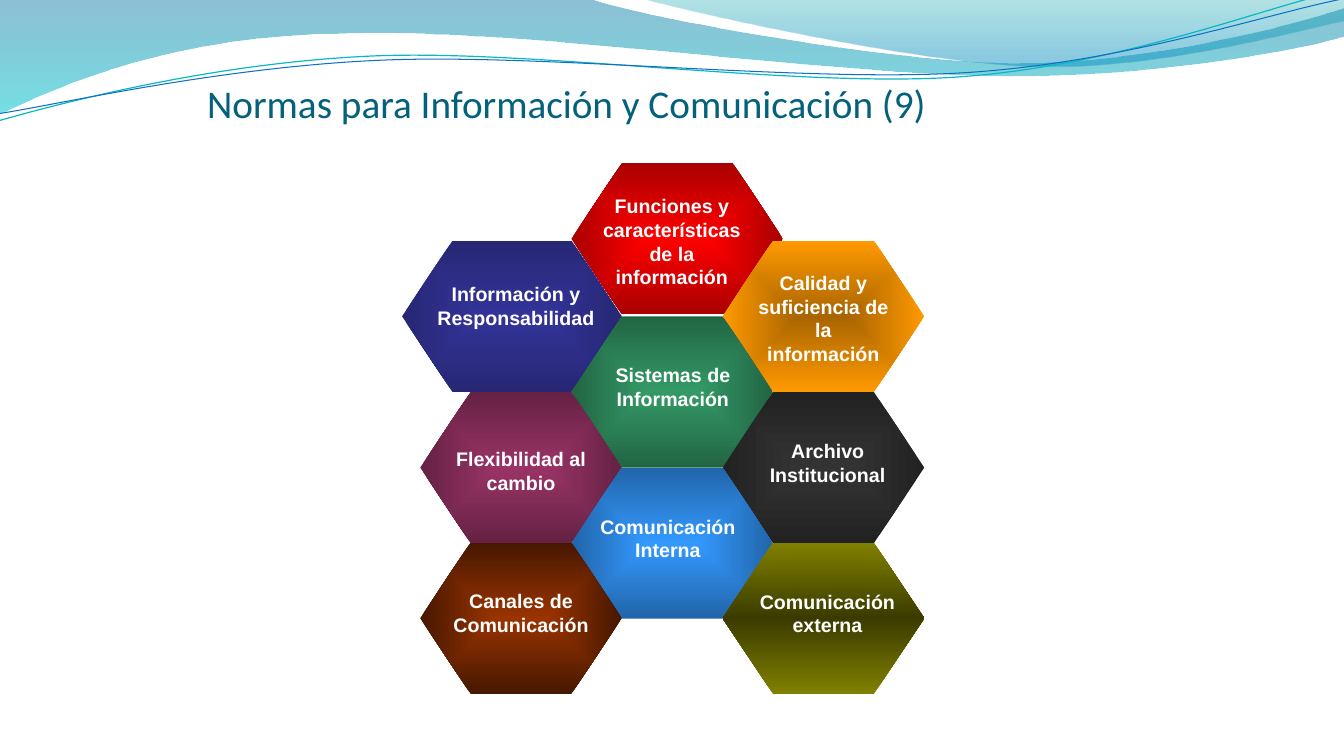
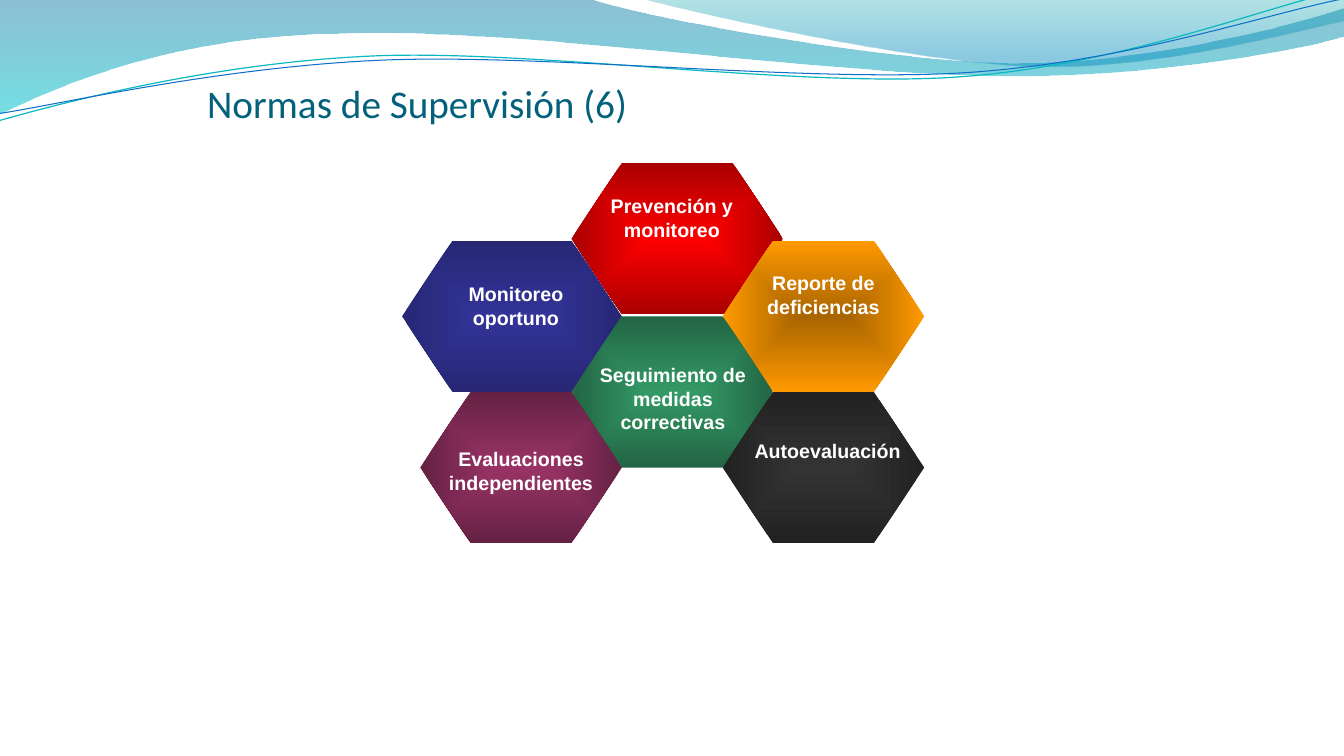
from dataclasses import dataclass

from pptx import Presentation
from pptx import util as u
from pptx.dml.color import RGBColor
from pptx.enum import shapes, text
from pptx.oxml import parse_xml
from pptx.oxml.ns import nsdecls, qn

Pt = u.Pt

COLOURS = {
    "title": "04617B", "label": "FFFFFF",
    "wave_blue": "0074A1", "wave_aqua": "00C6CF",
    "crest_teal": "00A1A9", "crest_blue": "008BBF",
    "line_teal": "0AB8BF", "line_blue": "0F6FC6",
    "red": "FF0000", "red_dark": "A90000",
    "navy": "333399", "navy_dark": "272774",
    "orange": "FF9900", "orange_dark": "A96500",
    "green": "339966", "green_dark": "226544",
    "plum": "993366", "plum_dark": "652244",
    "grey": "333333", "grey_dark": "222222",
    "blue": "3399FF", "blue_dark": "2265A9",
    "olive": "808000", "olive_dark": "3B3B00",
    "brown": "993300", "brown_dark": "471800",
}

TITLE_FONT = {"name": "Calibri", "size": Pt(28), "bold": False}
LABEL_FONT = {"name": "Arial", "size": Pt(14), "bold": True}
TITLE_PLACE = {"left": Pt(148), "top": Pt(39.6), "width": Pt(648), "height": Pt(50.4)}
TITLE_FRAME = {"margin_left": 0, "margin_right": 0, "margin_bottom": 0,
               "margin_top": Pt(3.6), "vertical_anchor": text.MSO_ANCHOR.BOTTOM}
LABEL_FRAME = {"word_wrap": True, "auto_size": text.MSO_AUTO_SIZE.SHAPE_TO_FIT_TEXT}

# Each outline: one letter per segment (L line, C curve), then its points.
WAVE = ("LCCLCCC", [
    (0, 0), (422.6, 0),
    (456.5, 12.2), (637.2, 45.4), (727.9, 45.4),
    (819.4, 45.4), (920.2, 18.7), (960, 6.5), (960, 25.9),
    (943.9, 31.7), (835.2, 54.7), (715.7, 54),
    (596.9, 54), (366.5, 20.2), (247, 24.5),
    (123.8, 25.2), (43.9, 59.8), (0, 81)])
CREST = ("CCL", [
    (460, 0), (488.9, 7.9), (654.5, 44.6), (738, 46.8),
    (821.5, 49.7), (923, 23), (960, 15.1), (960, 0)])
TEAL_LINE = ("CCC", [
    (0, 85.7), (46.1, 72.7), (151.9, 44.6), (265.7, 39.6),
    (379.4, 34.6), (568.8, 62.6), (684, 54.7),
    (799.2, 46.8), (901.4, 5.8), (958.3, -7.2)])
BLUE_LINE = ("CCC", [
    (0, 80.6), (45.4, 74.2), (157, 47.5), (272.2, 43.2),
    (386.6, 38.2), (573.1, 59), (687.6, 51.8),
    (802.8, 44.6), (903.6, 10.1), (960.5, -1.4)])

FIRST_COLUMN, COLUMN_STEP = 300.2, 108
ROW_TOPS = (116.6, 172, 226, 280, 334, 387.6)
CELL_WIDTH, CELL_HEIGHT = 144, 108
LINE_HEIGHT, LABEL_PADDING = 16.8, 7.2


@dataclass
class Cell:
    """A place in the honeycomb; label holds x offset, y offset and width."""
    column: int
    row: int
    tones: tuple
    label: tuple
    extra_left: float = 0
    extra_right: float = 0


CELLS = [
    Cell(1, 0, ("red", "red_dark"), (12, 18.7, 119.5), extra_right=7.2),
    Cell(0, 1, ("navy", "navy_dark"), (13, 26, 136.8), extra_left=13),
    Cell(2, 1, ("orange_dark", "orange"), (18, 18, 108)),
    Cell(1, 2, ("green", "green_dark"), (12.5, 30, 120)),
    Cell(0, 3, ("plum", "plum_dark"), (12, 36, 120)),
    Cell(2, 3, ("grey", "grey_dark"), (12, 30, 126)),
    Cell(1, 4, ("blue", "blue_dark"), (12, 30, 113.8)),
    Cell(2, 5, ("olive", "olive_dark", "olive"), (18, 30, 113.8)),
    Cell(0, 5, ("brown", "brown_dark"), (12, 29.5, 120)),
]

# Title, then a label and its number of lines for each cell in turn.
PAGES = [
    ("Normas para Información y Comunicación (9)", [
        ("Funciones y características de la información", 4),
        ("Información y Responsabilidad", 2),
        ("Calidad y suficiencia de la información", 4),
        ("Sistemas de Información", 2),
        ("Flexibilidad al cambio", 2),
        ("Archivo Institucional", 2),
        ("Comunicación Interna", 2),
        ("Comunicación externa", 2),
        ("Canales de Comunicación", 2)]),
    ("Normas de Supervisión (6)", [
        ("Prevención y monitoreo", 2),
        ("Monitoreo oportuno", 2),
        ("Reporte de deficiencias", 2),
        ("Seguimiento de medidas correctivas", 3),
        ("Evaluaciones independientes", 2),
        ("Autoevaluación", 1)]),
]


def apply(target, values):
    for name, value in values.items():
        setattr(target, name, value)


def rgb(name):
    return RGBColor.from_string(COLOURS[name])


def write(frame, words, font, colour, align):
    para = frame.paragraphs[0]
    para.alignment = align
    span = para.add_run()
    span.text = words
    apply(span.font, font)
    span.font.color.rgb = rgb(colour)


def fill_gradient(shape, stops, from_centre=False):
    """Fill with (position, colour, opacity) stops, in percent."""
    marks = "".join(
        f'<a:gs pos="{place * 1000}"><a:srgbClr val="{COLOURS[name]}">'
        f'<a:alpha val="{opacity * 1000}"/></a:srgbClr></a:gs>'
        for place, name, opacity in stops)
    direction = '<a:lin ang="5400000" scaled="0"/>'
    if from_centre:
        direction = ('<a:path path="shape"><a:fillToRect l="50000" t="50000" '
                     'r="50000" b="50000"/></a:path>')
    gradient = parse_xml(f'<a:gradFill {nsdecls("a")} rotWithShape="1">'
                         f'<a:gsLst>{marks}</a:gsLst>{direction}</a:gradFill>')
    shape.element.spPr[1].addnext(gradient)


def draw_outline(page, outline, closed):
    """Draw the control points, then merge each curve's three into a Bézier."""
    kinds, points = outline
    builder = page.shapes.build_freeform(*points[0], scale=Pt(1))
    builder.add_line_segments(points[1:], close=closed)
    shape = builder.convert_to_shape()
    shape.shadow.inherit = False
    steps = iter(list(shape.element.iter(qn("a:lnTo"))))
    for kind in kinds:
        first = next(steps)
        if kind == "C":
            first.tag = qn("a:cubicBezTo")
            for step in (next(steps), next(steps)):
                first.append(step[0])
                step.getparent().remove(step)
    return shape


def add_band(page, outline, stops):
    band = draw_outline(page, outline, closed=True)
    band.line.fill.background()
    fill_gradient(band, stops)
    return band


def add_wave_line(page, outline, colour, width):
    curve = draw_outline(page, outline, closed=False)
    curve.fill.background()
    curve.line.color.rgb = rgb(colour)
    curve.line.width = Pt(width)
    return curve


def style_layout(layout, page):
    """Draw the waves on a page and move them to the layout all pages share."""
    title = layout.placeholders[0]
    apply(title, TITLE_PLACE)
    apply(title.text_frame, TITLE_FRAME)
    waves = [
        add_band(page, WAVE, [(0, "wave_blue", 45), (100, "wave_aqua", 55)]),
        add_band(page, CREST, [(0, "crest_teal", 30), (80, "crest_blue", 45)]),
        add_wave_line(page, TEAL_LINE, "line_teal", 0.85),
        add_wave_line(page, BLUE_LINE, "line_blue", 0.75),
    ]
    for position, wave in enumerate(waves, start=2):
        layout.element.cSld.spTree.insert(position, wave.element)


def add_cell(page, cell, words, lines):
    left = FIRST_COLUMN + cell.column * COLUMN_STEP - cell.extra_left
    top = ROW_TOPS[cell.row]
    width = CELL_WIDTH + cell.extra_left + cell.extra_right
    group = page.shapes.add_group_shape()

    hexagon = group.shapes.add_shape(shapes.MSO_SHAPE.HEXAGON, Pt(left), Pt(top),
                                     Pt(width), Pt(CELL_HEIGHT))
    hexagon.adjustments[0] = 0.333
    hexagon.shadow.inherit = False
    hexagon.line.fill.background()
    last = len(cell.tones) - 1
    stops = [(100 * index // last, tone, 100) for index, tone in enumerate(cell.tones)]
    fill_gradient(hexagon, stops, from_centre=last == 1)

    across, down, label_width = cell.label
    box = group.shapes.add_textbox(Pt(left + across), Pt(top + down), Pt(label_width),
                                   Pt(lines * LINE_HEIGHT + LABEL_PADDING))
    apply(box.text_frame, LABEL_FRAME)
    write(box.text_frame, words, LABEL_FONT, "label", text.PP_ALIGN.CENTER)


def main():
    deck = Presentation()
    apply(deck, {"slide_width": Pt(960), "slide_height": Pt(540)})
    layout = deck.slide_layouts.get_by_name("Title Only")
    pages = [deck.slides.add_slide(layout) for _ in PAGES]
    style_layout(layout, pages[0])
    for page, (title, labels) in zip(pages, PAGES):
        write(page.shapes.title.text_frame, title, TITLE_FONT, "title",
              text.PP_ALIGN.LEFT)
        for cell, (words, lines) in zip(CELLS, labels):
            add_cell(page, cell, words, lines)
    deck.save("out.pptx")


if __name__ == "__main__":
    main()
